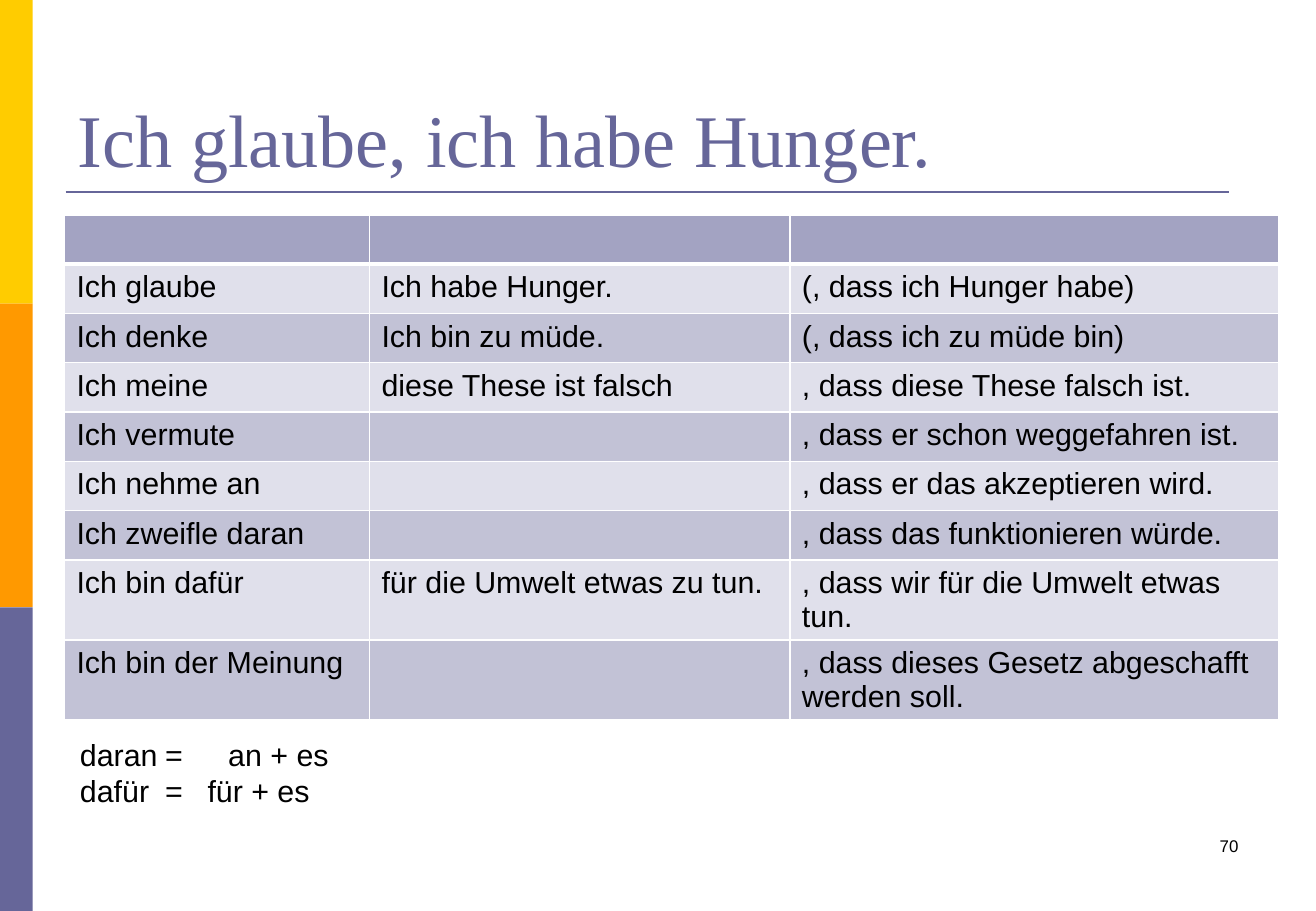
"""Build a German grammar slide on opinion verbs with and without dass clauses."""
from dataclasses import dataclass

from lxml.etree import SubElement
from pptx import Presentation
from pptx.dml.color import RGBColor
from pptx.enum.shapes import MSO_CONNECTOR, MSO_SHAPE
from pptx.enum.text import MSO_ANCHOR, MSO_AUTO_SIZE, PP_ALIGN
from pptx.oxml import parse_xml
from pptx.oxml.ns import nsdecls, qn
from pptx.util import Inches, Pt

TITLE = "Ich glaube, ich habe Hunger."
ROWS = [
    ("", "", ""),
    ("Ich glaube", "Ich habe Hunger.", "(, dass ich Hunger habe)"),
    ("Ich denke", "Ich bin zu müde.", "(, dass ich zu müde bin)"),
    ("Ich meine", "diese These ist falsch", ", dass diese These falsch ist."),
    ("Ich vermute", "", ", dass er schon weggefahren ist."),
    ("Ich nehme an", "", ", dass er das akzeptieren wird."),
    ("Ich zweifle daran", "", ", dass das funktionieren würde."),
    ("Ich bin dafür", "für die Umwelt etwas zu tun.", ", dass wir für die Umwelt etwas tun."),
    ("Ich bin der Meinung", "", ", dass dieses Gesetz abgeschafft werden soll."),
]
COLUMN_WIDTHS = (2.51, 3.46, 4.02)
NOTES = [("daran\t=\tan + es", (0.7, 1.22)), ("dafür\t=\tfür + es", (0.7, 1.05))]
PAGE_NUMBER = "70"


@dataclass(frozen=True)
class Theme:
    """Colours, fonts and type sizes of the slide."""

    bands: tuple = ("FFCC00", "FF9900", "666699")
    accent: str = "666699"
    text: str = "000000"
    border: str = "FFFFFF"
    header: str = "A3A3C2"
    stripes: tuple = ("E0E0EB", "C2C2D6")
    title_font: str = "Times New Roman"
    body_font: str = "Arial"
    title_size: int = 44
    body_size: int = 18
    number_size: int = 10


THEME = Theme()


def style(para, size, font=THEME.body_font, color=THEME.text, align=PP_ALIGN.LEFT):
    """Format one paragraph."""
    para.font.size = Pt(size)
    para.font.name = font
    para.font.color.rgb = RGBColor.from_string(color)
    para.alignment = align


def add_bands(page, height):
    """Stack the coloured bands down the left edge."""
    band_height = height // len(THEME.bands)
    for index, color in enumerate(THEME.bands):
        band = page.shapes.add_shape(
            MSO_SHAPE.RECTANGLE, 0, index * band_height, Inches(0.27), band_height)
        band.shadow.inherit = False
        band.fill.solid()
        band.fill.fore_color.rgb = RGBColor.from_string(color)
        band.line.fill.background()


def add_title(page):
    """Fill the title placeholder and draw the rule beneath it."""
    rule = page.shapes.add_connector(
        MSO_CONNECTOR.STRAIGHT, Inches(0.54), Inches(1.58), Inches(10.11), Inches(1.58))
    rule.line.color.rgb = RGBColor.from_string(THEME.accent)
    rule.line.width = Pt(1.5)
    SubElement(rule._element.spPr, qn("a:effectLst"))
    title = page.shapes.title
    title.left, title.top = Inches(0.54), Inches(0.3)
    title.width, title.height = Inches(9.75), Inches(1.25)
    frame = title.text_frame
    frame.text = TITLE
    frame.auto_size = MSO_AUTO_SIZE.NONE
    frame.vertical_anchor = MSO_ANCHOR.BOTTOM
    style(frame.paragraphs[0], THEME.title_size, THEME.title_font, THEME.accent)


def set_borders(cell, top, bottom):
    """Draw white cell borders, with the top and bottom widths in points."""
    properties = cell._tc.get_or_add_tcPr()
    sides = (("L", 1), ("R", 1), ("T", top), ("B", bottom))
    for index, (side, width) in enumerate(sides):
        properties.insert(index, parse_xml(
            f'<a:ln{side} {nsdecls("a")} w="{Pt(width)}"><a:solidFill>'
            f'<a:srgbClr val="{THEME.border}"/></a:solidFill></a:ln{side}>'))


def add_clause_table(page):
    """Build the table of opinion phrases and their clauses."""
    table = page.shapes.add_table(
        len(ROWS), len(COLUMN_WIDTHS), Inches(0.53), Inches(1.77),
        Inches(sum(COLUMN_WIDTHS)), Inches(3.65)).table
    for column, width in zip(table.columns, COLUMN_WIDTHS):
        column.width = Inches(width)
    for row, texts in enumerate(ROWS):
        color = THEME.stripes[(row - 1) % 2] if row else THEME.header
        for column, text in enumerate(texts):
            cell = table.cell(row, column)
            cell.text = text
            style(cell.text_frame.paragraphs[0], THEME.body_size)
            cell.fill.solid()
            cell.fill.fore_color.rgb = RGBColor.from_string(color)
            set_borders(cell, 3 if row == 1 else 1, 3 if row == 0 else 1)


def add_text_box(page, left, top, width, height):
    """Add a wrapping text box and return its frame."""
    box = page.shapes.add_textbox(Inches(left), Inches(top), Inches(width), Inches(height))
    box.text_frame.word_wrap = True
    return box.text_frame


def add_notes(page):
    """Write the word equations, aligned with tab stops."""
    frame = add_text_box(page, 0.56, 6.01, 3.7, 0.71)
    frame.text = "\n".join(text for text, stops in NOTES)
    for para, (text, stops) in zip(frame.paragraphs, NOTES):
        style(para, THEME.body_size)
        tabs = "".join(f'<a:tab pos="{Inches(stop)}" algn="l"/>' for stop in stops)
        para._p.get_or_add_pPr().insert(
            0, parse_xml(f'<a:tabLst {nsdecls("a")}>{tabs}</a:tabLst>'))


def add_page_number(page):
    """Write the page number at the lower right."""
    frame = add_text_box(page, 7.76, 6.83, 2.53, 0.5)
    frame.text = PAGE_NUMBER
    style(frame.paragraphs[0], THEME.number_size, align=PP_ALIGN.RIGHT)


def main():
    """Assemble and save the deck."""
    deck = Presentation()
    deck.slide_width, deck.slide_height = Inches(10.83), Inches(7.5)
    page = deck.slides.add_slide(deck.slide_layouts[5])
    add_bands(page, deck.slide_height)
    add_title(page)
    add_clause_table(page)
    add_page_number(page)
    add_notes(page)
    deck.save("out.pptx")


if __name__ == "__main__":
    main()
